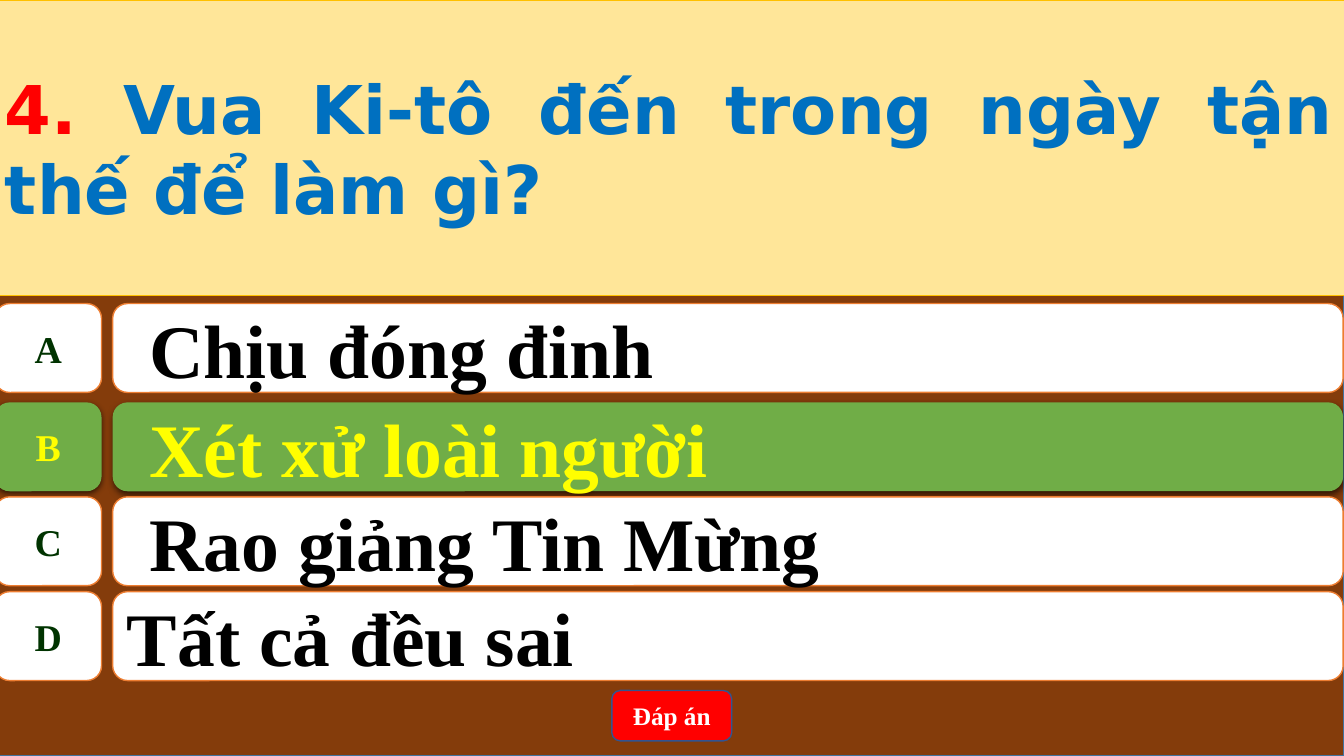
from dataclasses import dataclass

from lxml.etree import SubElement as Sub
from pptx import Presentation
from pptx.dml.color import RGBColor as RGB
from pptx.enum.shapes import MSO_SHAPE as Kind
from pptx.enum.text import MSO_ANCHOR as Anchor, MSO_AUTO_SIZE as Fit, PP_ALIGN as Align
from pptx.oxml.ns import qn
from pptx.util import Cm, Pt


@dataclass(frozen=True)
class Theme:
    serif: str = "Times New Roman"
    sans: str = "DejaVu Sans"
    brown: str = "843C0B"
    navy: str = "43739E"
    cream: str = "FFE699"
    gold: str = "FFC000"
    blue: str = "0070C0"
    red: str = "FF0000"
    edge: str = "325491"
    white: str = "FFFFFF"
    black: str = "000000"
    orange: str = "ED7D31"
    forest: str = "003300"
    green: str = "70AD47"
    yellow: str = "FFFF00"
    ask: int = 48
    reply: int = 54
    letter: int = 27
    button: int = 18


T = Theme()
LEFT, WIDE = -0.13, 34
ROW = 2.24
# Letter, answer, top in cm, indented, correct
ROWS = [
    ("A", "Chịu đóng đinh", 7.65, True, False),
    ("B", "Xét xử loài người", 10.14, True, True),
    ("C", "Rao giảng Tin Mừng", 12.52, True, False),
    ("D", "Tất cả đều sai", 14.91, False, False),
]


def paint(shape, fill, line=None, width=1):
    shape.fill.solid()
    shape.fill.fore_color.rgb = RGB.from_string(fill)
    if line:
        shape.line.color.rgb = RGB.from_string(line)
        shape.line.width = Pt(width)
    else:
        shape.line.fill.background()


def add_box(shapes, kind, place, fill, line=None):
    box = shapes.add_shape(kind, *map(Cm, place))
    box.shadow.inherit = False
    paint(box, fill, line)
    return box


def style(run, font, size, color):
    run.font.name = font
    run.font.size = Pt(size)
    run.font.bold = True
    run.font.color.rgb = RGB.from_string(color)


def write(box, text, size, color, align=Align.CENTER):
    frame = box.text_frame
    frame.text = text
    frame.vertical_anchor = Anchor.MIDDLE
    para = frame.paragraphs[0]
    para.alignment = align
    style(para.runs[0], T.serif, size, color)
    return para


def indent(para):
    para.level = 1
    props = para._p.get_or_add_pPr()
    props.set("marL", str(Cm(1.27)))
    props.set("indent", str(Cm(-0.71)))


def cast(box):
    """Give the box a soft shadow below it."""
    effects = box.element.spPr.find(qn("a:effectLst"))
    shade = Sub(effects, qn("a:outerShdw"), blurRad=str(Pt(4.5)),
                dist=str(Pt(1.5)), dir="5400000", algn="ctr", rotWithShape="0")
    color = Sub(shade, qn("a:srgbClr"), val=T.black)
    Sub(color, qn("a:alpha"), val="63000")


def add_title(slide):
    title = slide.shapes.title
    title.left, title.top, title.width, title.height = map(Cm, (LEFT, 0, WIDE, 7.44))
    paint(title, T.cream, T.gold, 0.5)
    frame = title.text_frame
    frame.word_wrap = True
    frame.auto_size = Fit.NONE
    frame.vertical_anchor = Anchor.MIDDLE
    para = frame.paragraphs[0]
    para.alignment = Align.JUSTIFY
    para.line_spacing = 1.0
    for text, color in (("4. ", T.red),
                        ("Vua Ki-tô đến trong ngày tận thế để làm gì?", T.blue)):
        run = para.add_run()
        run.text = text
        style(run, T.sans, T.ask, color)


def add_row(slide, letter, answer, top, inset, right):
    shapes = slide.shapes.add_group_shape().shapes
    fill, line = (T.green, None) if right else (T.white, T.orange)
    tag = add_box(shapes, Kind.FLOWCHART_ALTERNATE_PROCESS,
                  (LEFT, top, 2.69, ROW), fill, line)
    write(tag, letter, T.letter, T.yellow if right else T.forest)
    tag.text_frame.word_wrap = False
    bar = add_box(shapes, Kind.ROUNDED_RECTANGLE, (2.84, top, 31.01, ROW), fill, line)
    para = write(bar, answer, T.reply, T.yellow if right else T.black, Align.LEFT)
    if inset:
        indent(para)
    if right:
        cast(tag)
        cast(bar)


def main():
    deck = Presentation()
    deck.slide_width, deck.slide_height = Cm(33.87), Cm(19.05)
    slide = deck.slides.add_slide(deck.slide_layouts[5])

    # Backdrop, placed behind the title
    back = add_box(slide.shapes, Kind.RECTANGLE, (LEFT, 0, WIDE, 19.05), T.brown, T.navy)
    slide.shapes.title.element.addprevious(back.element)

    # Question and answers
    add_title(slide)
    for row in ROWS:
        add_row(slide, *row)

    # Answer button
    button = add_box(slide.shapes, Kind.ROUNDED_RECTANGLE,
                     (15.42, 17.4, 3.02, 1.27), T.red, T.edge)
    write(button, "Đáp án", T.button, T.white)

    deck.save("out.pptx")


if __name__ == "__main__":
    main()
